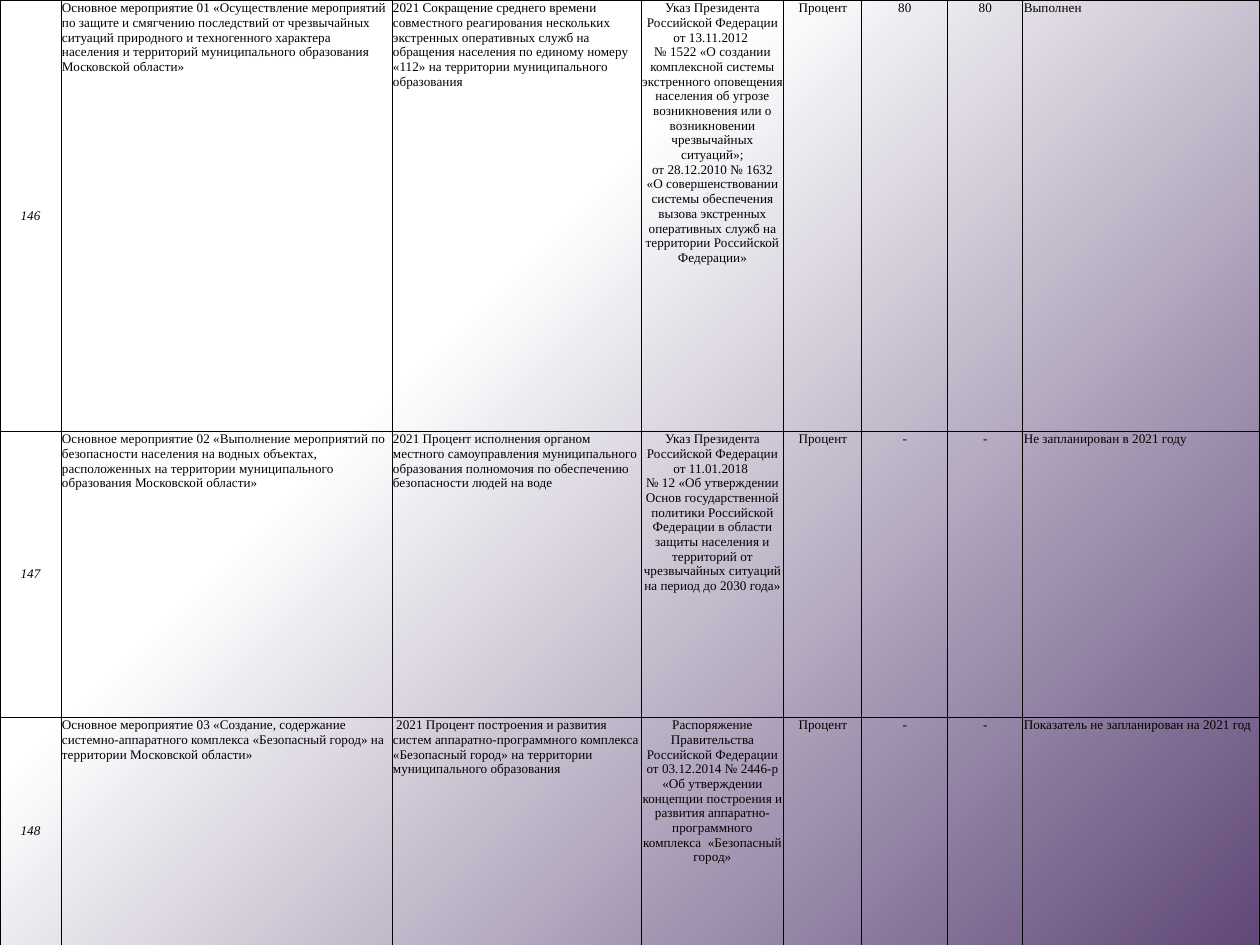
from copy import deepcopy

from pptx import Presentation
from pptx.dml.color import RGBColor
from pptx.enum.text import MSO_ANCHOR, PP_ALIGN
from pptx.oxml import parse_xml
from pptx.oxml.ns import nsdecls, qn
from pptx.util import Emu, Pt

SCALE = 914400 / 126  # EMU in one px
WIDE, HIGH = 1260, 945
COLS = [61, 331, 249, 143, 78, 86, 75, 237]
ROWS = [431, 286, 228]

BLACK = RGBColor(0x00, 0x00, 0x00)
WHITE = RGBColor(0xFF, 0xFF, 0xFF)
PLUM = RGBColor(0x60, 0x48, 0x78)
STOPS = [(0, WHITE), (0.35, WHITE), (1, PLUM)]

FONT = "Times New Roman"
SIZE = 7.5
LEFT = {1, 2, 7}  # columns of running text

UNIT = "Процент"
DATA = [
    ["146",
     "Основное мероприятие 01 «Осуществление мероприятий по защите и смягчению "
     "последствий от чрезвычайных ситуаций природного и техногенного характера "
     "населения и территорий муниципального образования Московской области»",
     "2021 Сокращение среднего времени совместного реагирования нескольких "
     "экстренных оперативных служб на обращения населения по единому номеру "
     "«112» на территории муниципального образования",
     "Указ Президента Российской Федерации\nот 13.11.2012 \n"
     "№ 1522 «О создании комплексной системы экстренного оповещения населения "
     "об угрозе возникновения или о возникновении чрезвычайных ситуаций»;\n"
     "от 28.12.2010 № 1632\n"
     "«О совершенствовании системы обеспечения вызова экстренных оперативных "
     "служб на территории Российской Федерации»",
     UNIT, "80", "80", "Выполнен"],
    ["147",
     "Основное мероприятие 02 «Выполнение мероприятий по безопасности населения "
     "на водных объектах, расположенных на территории муниципального "
     "образования Московской области»",
     "2021 Процент исполнения органом местного самоуправления муниципального "
     "образования полномочия по обеспечению безопасности людей на воде",
     "Указ Президента Российской Федерации от 11.01.2018 \n"
     "№ 12 «Об утверждении Основ государственной политики Российской Федерации "
     "в области защиты населения и территорий от чрезвычайных ситуаций "
     "на период до 2030 года»",
     UNIT, "-", "-", "Не запланирован в 2021 году"],
    ["148",
     "Основное мероприятие 03 «Создание, содержание системно-аппаратного "
     "комплекса «Безопасный город» на территории Московской области»",
     " 2021 Процент построения и развития систем аппаратно-программного "
     "комплекса «Безопасный город» на территории муниципального образования",
     "Распоряжение Правительства Российской Федерации от 03.12.2014 № 2446-р "
     "«Об утверждении концепции построения и развития аппаратно-программного "
     "комплекса  «Безопасный город»",
     UNIT, "-", "-", "Показатель не запланирован на 2021 год"],
]


def px(num):
    return Emu(round(num * SCALE))


def paint_back(slide):
    fill = slide.background.fill
    fill.gradient()
    fill.gradient_angle = 315  # counted anticlockwise
    # The default gradient has two stops; add the third
    stops = slide.element.find(".//" + qn("a:gsLst"))
    stops.append(deepcopy(stops[-1]))
    for stop, (place, color) in zip(fill.gradient_stops, STOPS):
        stop.position = place
        stop.color.rgb = color


def add_edges(cell):
    props = cell._tc.get_or_add_tcPr()
    for side in ("lnL", "lnR", "lnT", "lnB"):
        props.append(parse_xml(
            f'<a:{side} {nsdecls("a")} w="{Pt(0.5)}"><a:solidFill>'
            f'<a:srgbClr val="{BLACK}"/></a:solidFill></a:{side}>'))


def add_text(cell, text, align, slant):
    para = cell.text_frame.paragraphs[0]
    para.alignment = align
    for num, line in enumerate(text.split("\n")):
        if num:
            para.add_line_break()
        run = para.add_run()
        run.text = line
        font = run.font
        font.name = FONT
        font.size = Pt(SIZE)
        font.italic = slant
        font.color.rgb = BLACK


def fill_cell(cell, text, col):
    add_edges(cell)
    cell.fill.background()
    cell.margin_left = cell.margin_right = cell.margin_top = px(1)
    cell.margin_bottom = 0
    first = col == 0
    cell.vertical_anchor = MSO_ANCHOR.MIDDLE if first else MSO_ANCHOR.TOP
    align = PP_ALIGN.LEFT if col in LEFT else PP_ALIGN.CENTER
    add_text(cell, text, align, first)


def add_grid(slide):
    frame = slide.shapes.add_table(len(ROWS), len(COLS), 0, 0, px(WIDE), px(HIGH))
    table = frame.table
    table.first_row = table.horz_banding = False
    for col, width in zip(table.columns, COLS):
        col.width = px(width)
    for row, height in zip(table.rows, ROWS):
        row.height = px(height)
    for row, texts in zip(table.rows, DATA):
        for col, text in enumerate(texts):
            fill_cell(row.cells[col], text, col)


def main():
    deck = Presentation()
    deck.slide_width, deck.slide_height = px(WIDE), px(HIGH)
    slide = deck.slides.add_slide(deck.slide_layouts[6])  # blank layout

    # Background
    paint_back(slide)

    # Table of measures
    add_grid(slide)

    deck.save("out.pptx")


if __name__ == "__main__":
    main()
